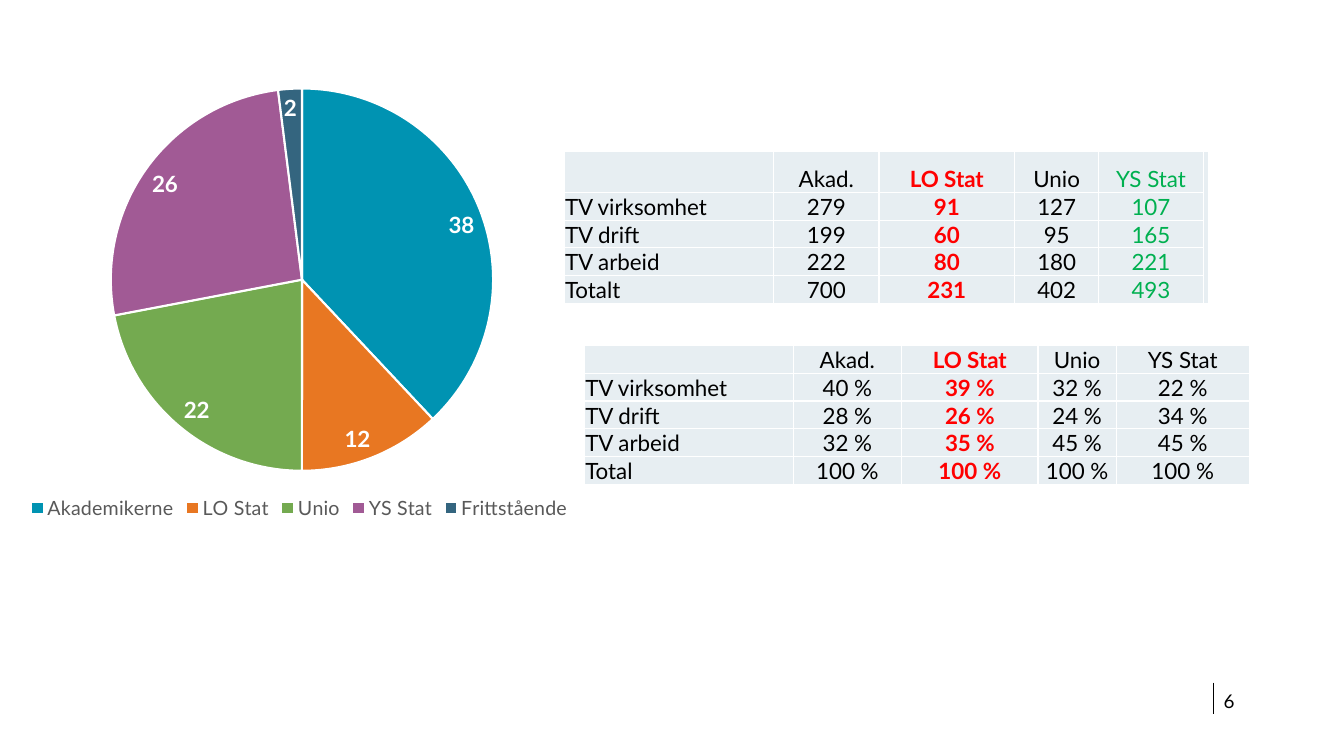
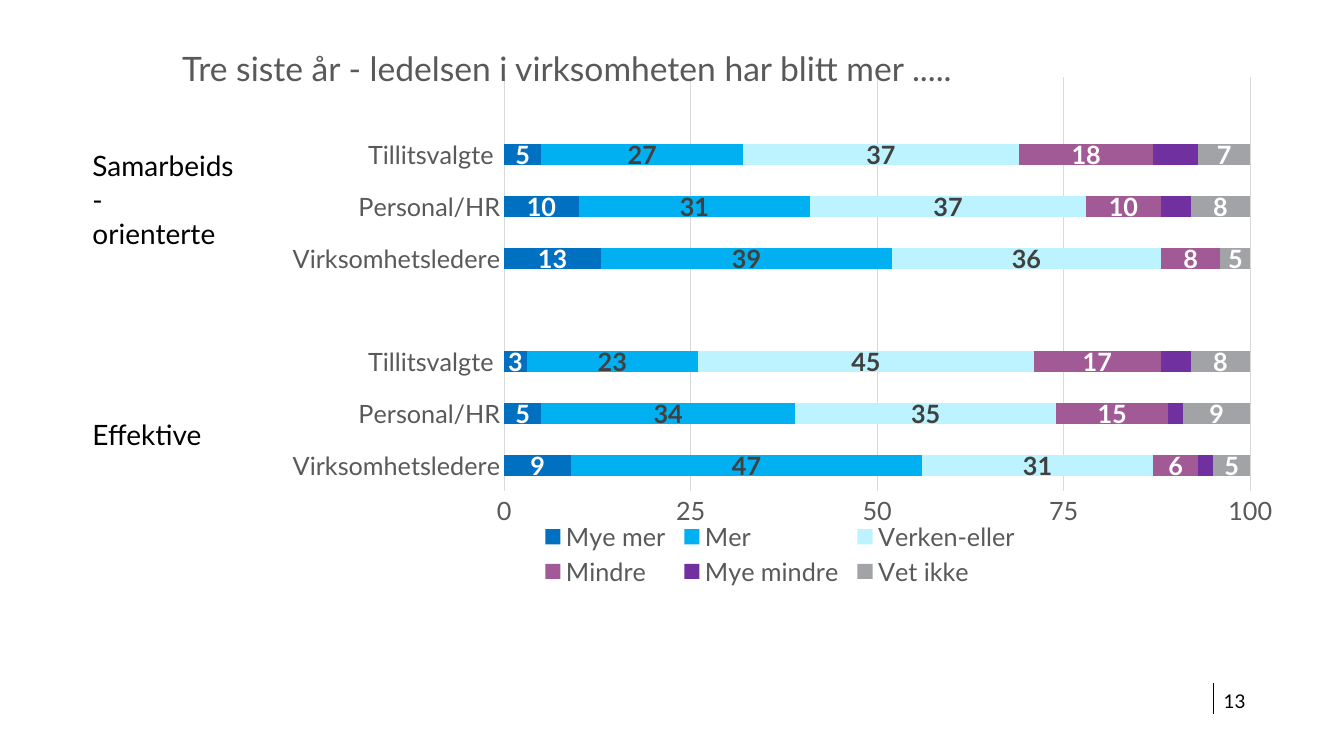
from lxml.etree import SubElement
from pptx import Presentation
from pptx.chart.data import CategoryChartData
from pptx.dml.color import RGBColor
from pptx.enum.chart import XL_CHART_TYPE, XL_LABEL_POSITION, XL_LEGEND_POSITION, XL_TICK_MARK
from pptx.enum.shapes import MSO_CONNECTOR
from pptx.enum.text import MSO_ANCHOR, PP_ALIGN
from pptx.oxml import parse_xml
from pptx.oxml.ns import nsdecls, qn
from pptx.util import Cm, Pt

FONT = "Lato"
BLACK = RGBColor(0x00, 0x00, 0x00)
WHITE = RGBColor(0xFF, 0xFF, 0xFF)
GREY = RGBColor(0x59, 0x59, 0x59)
DARK = RGBColor(0x40, 0x40, 0x40)
GRID = RGBColor(0xD9, 0xD9, 0xD9)
PALE = RGBColor(0xE7, 0xEE, 0xF2)
RED = RGBColor(0xFF, 0x00, 0x00)
GREEN = RGBColor(0x00, 0xB0, 0x50)
TEAL = RGBColor(0x00, 0x93, 0xB2)
ORANGE = RGBColor(0xE8, 0x77, 0x22)
LEAF = RGBColor(0x74, 0xAA, 0x50)
PLUM = RGBColor(0xA1, 0x5A, 0x95)
SLATE = RGBColor(0x34, 0x65, 0x7F)
BLUE = RGBColor(0x00, 0x70, 0xC0)
SKY = RGBColor(0x00, 0xB0, 0xF0)
ICE = RGBColor(0xBD, 0xF3, 0xFF)
VIOLET = RGBColor(0x70, 0x30, 0xA0)
SILVER = RGBColor(0xA1, 0xA3, 0xA6)


def set_font(font, size, color, bold=False):
    font.name = FONT
    font.size = Pt(size)
    font.color.rgb = color
    font.bold = bold


def add_chart(slide, kind, box, data, size):
    chart = slide.shapes.add_chart(kind, *map(Cm, box), data).chart
    set_font(chart.font, size, GREY)
    chart.has_title = False
    chart.has_legend = True
    chart.legend.position = XL_LEGEND_POSITION.BOTTOM
    chart.legend.include_in_layout = False
    set_font(chart.legend.font, size, GREY)
    return chart


deck = Presentation()
deck.slide_width = Cm(33.87)
deck.slide_height = Cm(19.05)
blank = deck.slide_layouts[6]

slides = []
for number in ("6", "13"):
    slide = deck.slides.add_slide(blank)
    slides.append(slide)
    rule = slide.shapes.add_connector(
        MSO_CONNECTOR.STRAIGHT, Cm(30.58), Cm(17.2), Cm(30.58), Cm(17.98))
    rule.line.color.rgb = BLACK
    rule.line.width = Pt(0.75)
    SubElement(rule._element.spPr, qn("a:effectLst"))
    page = slide.shapes.add_textbox(Cm(30.84), Cm(17.42), Cm(2.8), Cm(0.48)).text_frame
    page.margin_left = page.margin_right = page.margin_top = page.margin_bottom = 0
    page.word_wrap = True
    page.vertical_anchor = MSO_ANCHOR.MIDDLE
    page.text = number
    set_font(page.paragraphs[0].font, 13.5, BLACK)
members_slide, leadership_slide = slides

members = CategoryChartData()
members.categories = ["Akademikerne", "LO Stat", "Unio", "YS Stat", "Frittstående "]
members.add_series("Series 1", (38, 12, 22, 26, 2))
pie = add_chart(members_slide, XL_CHART_TYPE.PIE, (-2.46, 1.88, 20.14, 11.33), members, 14)
shares = pie.plots[0]
shares.vary_by_categories = True
for index, color in enumerate((TEAL, ORANGE, LEAF, PLUM, SLATE)):
    wedge = shares.series[0].points[index].format
    wedge.fill.solid()
    wedge.fill.fore_color.rgb = color
    wedge.line.color.rgb = WHITE
    wedge.line.width = Pt(1.5)
share_labels = shares.series[0].data_labels
share_labels.show_value = True
share_labels.position = XL_LABEL_POSITION.INSIDE_END
set_font(share_labels.font, 16, WHITE, True)

counts = (
    ("", "Akad.", "LO Stat", "Unio", "YS Stat", ""),
    ("TV virksomhet", "279", "91", "127", "107", ""),
    ("TV drift", "199", "60", "95", "165", ""),
    ("TV arbeid", "222", "80", "180", "221", ""),
    ("Totalt", "700", "231", "402", "493", ""),
)
percentages = (
    ("", "Akad.", "LO Stat", "Unio", "YS Stat"),
    ("TV virksomhet", "40 %", "39 %", "32 %", "22 %"),
    ("TV drift", "28 %", "26 %", "24 %", "34 %"),
    ("TV arbeid", "32 %", "35 %", "45 %", "45 %"),
    ("Total", "100 %", "100 %", "100 %", "100 %"),
)
ROW = 0.69
for rows, left, top, widths, header, last_color in (
    (counts, 14.22, 3.81, (5.28, 2.65, 3.42, 2.12, 2.63, 0.1), 1.04, GREEN),
    (percentages, 14.73, 8.71, (5.26, 2.73, 3.44, 1.97, 3.35), ROW, BLACK),
):
    table = members_slide.shapes.add_table(
        len(rows), len(widths), Cm(left), Cm(top),
        Cm(sum(widths)), Cm(header + ROW * (len(rows) - 1))).table
    table.first_row = False
    table.horz_banding = False
    for column, width in zip(table.columns, widths):
        column.width = Cm(width)
    for r, row in enumerate(rows):
        table.rows[r].height = Cm(ROW if r else header)
        for c, text in enumerate(row):
            cell = table.cell(r, c)
            cell.margin_left = cell.margin_right = cell.margin_top = Cm(0.02)
            cell.margin_bottom = 0
            cell.vertical_anchor = MSO_ANCHOR.BOTTOM
            for side in ("L", "R", "T", "B"):
                cell._tc.get_or_add_tcPr().append(parse_xml(
                    f'<a:ln{side} {nsdecls("a")} w="12700"><a:solidFill>'
                    f'<a:srgbClr val="{WHITE}"/></a:solidFill></a:ln{side}>'))
            cell.fill.solid()
            cell.fill.fore_color.rgb = PALE
            cell.text = text
            entry = cell.text_frame.paragraphs[0]
            entry.alignment = PP_ALIGN.CENTER if c else PP_ALIGN.LEFT
            set_font(entry.font, 16, {2: RED, 4: last_color}.get(c, BLACK), c == 2)
    if rows is counts:
        table.cell(0, 5).merge(table.cell(len(rows) - 1, 5))

answers = CategoryChartData()
answers.categories = ["Virksomhetsledere", "Personal/HR", "Tillitsvalgte ", ""] * 2
scale = (
    ("Mye mer", (9, 5, 3, None, 13, 10, 5, None), BLUE, WHITE),
    ("Mer ", (47, 34, 23, None, 39, 31, 27, None), SKY, DARK),
    ("Verken-eller", (31, 35, 45, None, 36, 37, 37, None), ICE, DARK),
    ("Mindre ", (6, 15, 17, None, 8, 10, 18, None), PLUM, WHITE),
    ("Mye mindre", (2, 2, 4, None, 0, 4, 6, None), VIOLET, None),
    ("Vet ikke ", (5, 9, 8, None, 5, 8, 7, None), SILVER, WHITE),
)
for name, values, color, label_color in scale:
    answers.add_series(name, values)
bars = add_chart(leadership_slide, XL_CHART_TYPE.BAR_STACKED,
                 (6.78, 1.68, 25.76, 13.21), answers, 18)
stack = bars.plots[0]
stack.vary_by_categories = False
stack.gap_width = 150
stack.overlap = 100
for series, (name, values, color, label_color) in zip(stack.series, scale):
    series.format.fill.solid()
    series.format.fill.fore_color.rgb = color
    if label_color is not None:
        series.data_labels.show_value = True
        series.data_labels.position = XL_LABEL_POSITION.CENTER
        set_font(series.data_labels.font, 18, label_color, True)

groups, percent = bars.category_axis, bars.value_axis
for axis in (groups, percent):
    axis.major_tick_mark = axis.minor_tick_mark = XL_TICK_MARK.NONE
    set_font(axis.tick_labels.font, 18, GREY)
groups.format.line.color.rgb = GRID
groups.format.line.width = Pt(0.75)
percent.format.line.fill.background()
percent.minimum_scale = 0
percent.maximum_scale = 100
percent.major_unit = 25
percent.major_gridlines.format.line.color.rgb = GRID
percent.major_gridlines.format.line.width = Pt(0.75)

plot_area = bars._chartSpace.chart.plotArea
for part, index, target, (x, y, w, h) in (
    (plot_area, 0, '<c:layoutTarget val="inner"/>', (0.23, 0.02, 0.73, 0.79)),
    (bars.legend._element, 1, "", (0.26, 0.86, 0.48, 0.14)),
):
    for layout in part.findall(qn("c:layout")):
        part.remove(layout)
    part.insert(index, parse_xml(
        f'<c:layout {nsdecls("c")}><c:manualLayout>{target}'
        f'<c:xMode val="edge"/><c:yMode val="edge"/><c:x val="{x}"/><c:y val="{y}"/>'
        f'<c:w val="{w}"/><c:h val="{h}"/></c:manualLayout></c:layout>'))

qualities = leadership_slide.shapes.add_textbox(Cm(2.08), Cm(3.63), Cm(4.2), Cm(7.09)).text_frame
qualities.word_wrap = True
qualities.text = "Samarbeids-\norienterte\nEffektive"
for quality in qualities.paragraphs:
    set_font(quality.font, 20, BLACK)
qualities.paragraphs[2].space_before = Pt(120)

heading = leadership_slide.shapes.add_textbox(Cm(1.68), Cm(1.09), Cm(25.43), Cm(1.27)).text_frame
heading.word_wrap = True
heading.text = "Tre siste år - ledelsen i virksomheten har blitt mer ..... "
heading.paragraphs[0].alignment = PP_ALIGN.CENTER
set_font(heading.paragraphs[0].font, 24, GREY)

deck.save("out.pptx")
